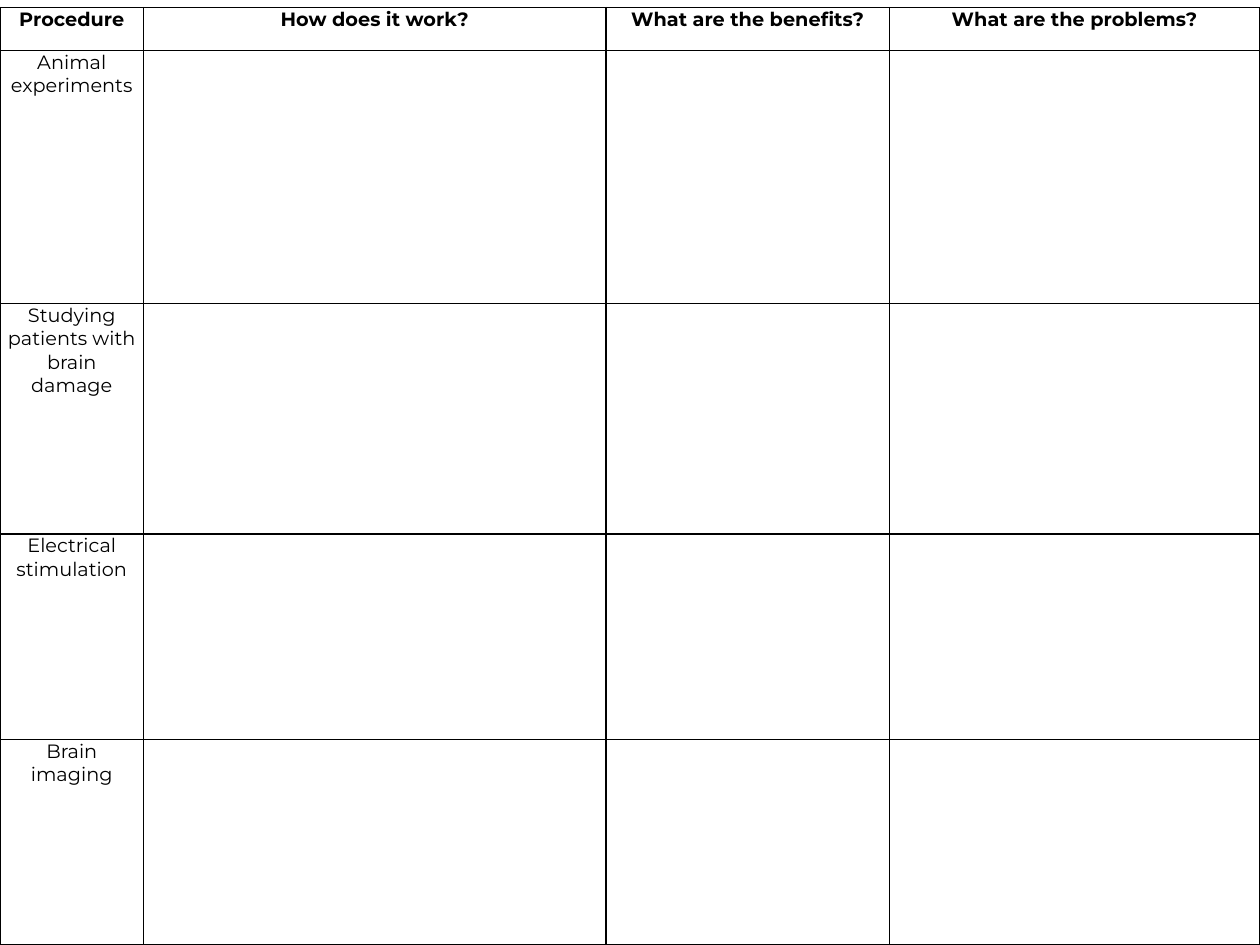
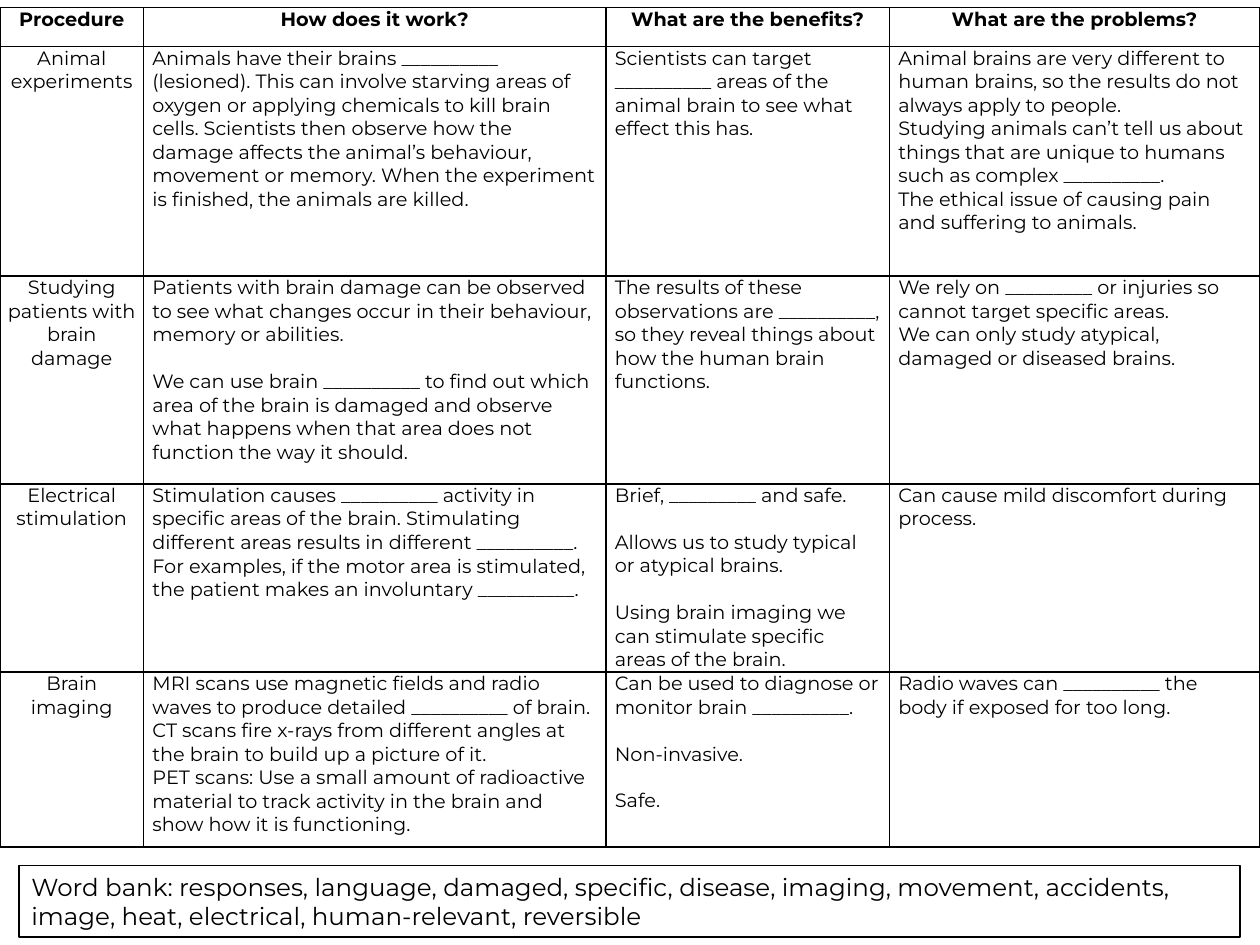
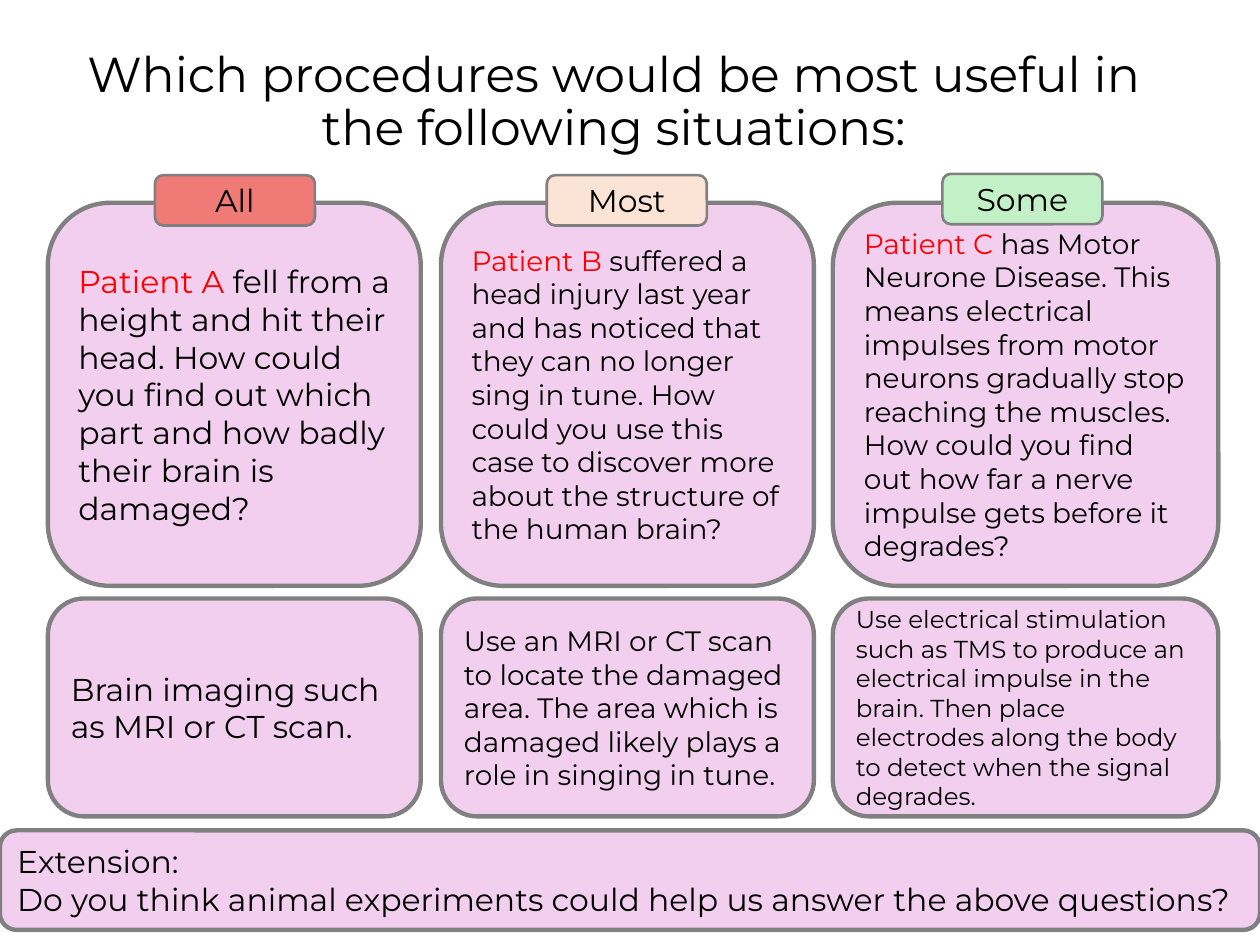
from dataclasses import dataclass
from typing import NamedTuple

from lxml.etree import SubElement
from pptx import Presentation
from pptx.dml.color import RGBColor
from pptx.enum.shapes import MSO_SHAPE
from pptx.enum.text import MSO_ANCHOR, MSO_AUTO_SIZE, PP_ALIGN
from pptx.oxml.ns import qn
from pptx.shapes.autoshape import Shape
from pptx.slide import Slide
from pptx.table import _Cell
from pptx.text.text import TextFrame
from pptx.util import Inches, Pt

SLIDE_WIDTH, SLIDE_HEIGHT = Inches(10), Inches(7.5)
GRID_COLUMNS, GRID_ROWS = 100, 75
FONT = "Montserrat"
BLACK, WHITE, GREY, RED, PINK = "000000", "FFFFFF", "808080", "FF0000", "F2CFEE"
TABLE_SIZE, TABLE_LINE = 11, 13.4
TABLE_TOP = 0.6
TABLE_COLUMNS = (11.4, 36.7, 22.5, 29.4)
HEADINGS = ("Procedure", "How does it work?", "What are the benefits?", "What are the problems?")
PROCEDURES = (
    "Animal experiments",
    "Studying patients with brain damage",
    "Electrical stimulation",
    "Brain imaging",
)
BLANK_ROWS = (3.4, 20.1, 18.3, 16.3, 16.3)
NOTES_ROWS = (3.1, 18.2, 16.5, 14.9, 13.9)
PANEL_LINE, LABEL_LINE = 2.5, 1.5


class Box(NamedTuple):
    """A place on the slide grid."""

    column: float
    row: float
    width: float
    height: float


class Span(NamedTuple):
    """A run of text in one colour."""

    text: str
    color: str = BLACK


class Notes(NamedTuple):
    """The paragraphs of a table cell and the space between them in points."""

    paragraphs: tuple[str, ...]
    gap: float = 0


@dataclass(frozen=True)
class Style:
    """The look of a text."""

    size: float
    bold: bool = False
    align: PP_ALIGN = PP_ALIGN.LEFT
    line_spacing: float | None = None
    gap: float = 0


@dataclass(frozen=True)
class Situation:
    """A patient's case with its level label and its answer."""

    level: str
    level_color: str
    level_column: float
    level_row: float
    column: float
    width: float
    patient: str
    question: str
    question_size: float
    answer: str
    answer_size: float


NOTES = (
    (
        Notes((
            "Animals have their brains __________ (lesioned). This can involve starving areas of "
            "oxygen or applying chemicals to kill brain cells. Scientists then observe how the "
            "damage affects the animal’s behaviour, movement or memory. When the experiment is "
            "finished, the animals are killed.",
        )),
        Notes((
            "Scientists can target __________ areas of the animal brain to see what effect this has.",
        )),
        Notes((
            "Animal brains are very different to human brains, so the results do not always apply "
            "to people.",
            "Studying animals can’t tell us about things that are unique to humans such as complex "
            "__________.",
            "The ethical issue of causing pain and suffering to animals.",
        )),
    ),
    (
        Notes((
            "Patients with brain damage can be observed to see what changes occur in their "
            "behaviour, memory or abilities.",
            "We can use brain __________ to find out which area of the brain is damaged and observe "
            "what happens when that area does not function the way it should.",
        ), TABLE_LINE),
        Notes((
            "The results of these observations are __________, so they reveal things about how the "
            "human brain functions.",
        )),
        Notes((
            "We rely on _________ or injuries so cannot target specific areas.",
            "We can only study atypical, damaged or diseased brains.",
        )),
    ),
    (
        Notes((
            "Stimulation causes __________ activity in specific areas of the brain. Stimulating "
            "different areas results in different __________. For examples, if the motor area is "
            "stimulated, the patient makes an involuntary __________.",
        )),
        Notes((
            "Brief, _________ and safe.",
            "Allows us to study typical or atypical brains.",
            "Using brain imaging we can stimulate specific areas of the brain.",
        ), TABLE_LINE),
        Notes(("Can cause mild discomfort during process.",)),
    ),
    (
        Notes((
            "MRI scans use magnetic fields and radio waves to produce detailed __________ of brain.",
            "CT scans fire x-rays from different angles at the brain to build up a picture of it.",
            "PET scans: Use a small amount of radioactive material to track activity in the brain "
            "and show how it is functioning.",
        )),
        Notes((
            "Can be used to diagnose or monitor brain __________.",
            "Non-invasive.",
            "Safe.",
        ), TABLE_LINE),
        Notes(("Radio waves can __________ the body if exposed for too long.",)),
    ),
)
WORD_BANK = (
    "Word bank: responses, language, damaged, specific, disease, imaging, movement, accidents, "
    "image, heat, electrical, human-relevant, reversible"
)
QUESTION = "Which procedures would be most useful in the following situations:"
EXTENSION = (
    "Extension:",
    "Do you think animal experiments could help us answer the above questions?",
)
SITUATIONS = (
    Situation(
        "All", "F07A75", 12.3, 13.9, 3.8, 29.6, "Patient A ",
        "fell from a height and hit their head. How could you find out which part and how badly "
        "their brain is damaged?", 18,
        "Brain imaging such as MRI or CT scan.", 18,
    ),
    Situation(
        "Most", "FBE3D6", 43.4, 13.9, 35, 29.6, "Patient B ",
        "suffered a head injury last year and has noticed that they can no longer sing in tune. "
        "How could you use this case to discover more about the structure of the human brain?", 16,
        "Use an MRI or CT scan to locate the damaged area. The area which is damaged likely plays "
        "a role in singing in tune.", 16,
    ),
    Situation(
        "Some", "C2F1C8", 74.8, 13.8, 66.1, 30.6, "Patient C ",
        "has Motor Neurone Disease. This means electrical impulses from motor neurons gradually "
        "stop reaching the muscles. How could you find out how far a nerve impulse gets before it "
        "degrades?", 16,
        "Use electrical stimulation such as TMS to produce an electrical impulse in the brain. "
        "Then place electrodes along the body to detect when the signal degrades.", 14,
    ),
)


def rgb(color: str) -> RGBColor:
    """Turn a hex string into a colour."""
    return RGBColor.from_string(color)


def across(columns: float) -> int:
    """Turn grid columns into a length."""
    return round(SLIDE_WIDTH * columns / GRID_COLUMNS)


def down(rows: float) -> int:
    """Turn grid rows into a length."""
    return round(SLIDE_HEIGHT * rows / GRID_ROWS)


def place(box: Box) -> tuple[int, int, int, int]:
    """Turn a grid box into left, top, width and height."""
    return across(box.column), down(box.row), across(box.width), down(box.height)


def plain(*texts: str) -> tuple[tuple[Span, ...], ...]:
    """Make one black paragraph of each text."""
    return tuple((Span(text),) for text in texts)


def write(frame: TextFrame, paragraphs: tuple[tuple[Span, ...], ...], style: Style) -> None:
    """Write paragraphs into a text frame run by run."""
    frame.word_wrap = True
    for index, spans in enumerate(paragraphs):
        paragraph = frame.add_paragraph() if index else frame.paragraphs[0]
        paragraph.alignment = style.align
        if style.line_spacing:
            paragraph.line_spacing = style.line_spacing
        if index and style.gap:
            paragraph.space_before = Pt(style.gap)
        for span in spans:
            run = paragraph.add_run()
            run.text = span.text
            run.font.name = FONT
            run.font.size = Pt(style.size)
            run.font.bold = style.bold
            run.font.color.rgb = rgb(span.color)


def finish_cell(cell: _Cell, inset: float) -> None:
    """Give a cell its borders, margins and fill."""
    properties = cell._tc.get_or_add_tcPr()
    for side in ("a:lnL", "a:lnR", "a:lnT", "a:lnB"):
        border = SubElement(properties, qn(side), w=str(Pt(1)))
        SubElement(SubElement(border, qn("a:solidFill")), qn("a:srgbClr"), val=BLACK)
    cell.fill.solid()
    cell.fill.fore_color.rgb = rgb(WHITE)
    cell.margin_left = cell.margin_right = Inches(inset)
    cell.margin_top = cell.margin_bottom = 0


def add_procedure_table(
    slide: Slide, heights: tuple[float, ...], notes: tuple[tuple[Notes, ...], ...] = ()
) -> None:
    """Draw the table of procedures, with notes if there are any."""
    box = Box(0, TABLE_TOP, sum(TABLE_COLUMNS), sum(heights))
    table = slide.shapes.add_table(len(heights), len(TABLE_COLUMNS), *place(box)).table
    table.first_row = table.horz_banding = False
    for column, width in zip(table.columns, TABLE_COLUMNS):
        column.width = across(width)
    for row, height in zip(table.rows, heights):
        row.height = down(height)
    heading_style = Style(TABLE_SIZE, bold=True, align=PP_ALIGN.CENTER)
    procedure_style = Style(TABLE_SIZE, align=PP_ALIGN.CENTER)
    for index, heading in enumerate(HEADINGS):
        write(table.cell(0, index).text_frame, plain(heading), heading_style)
    for index, procedure in enumerate(PROCEDURES, 1):
        write(table.cell(index, 0).text_frame, plain(procedure), procedure_style)
    for row_index, row_notes in enumerate(notes, 1):
        for index, note in enumerate(row_notes, 1):
            frame = table.cell(row_index, index).text_frame
            write(frame, plain(*note.paragraphs), Style(TABLE_SIZE, gap=note.gap))
    for row_index, row in enumerate(table.rows):
        for index, cell in enumerate(row.cells):
            finish_cell(cell, 0.07 if row_index and index else 0.06)


def add_panel(
    slide: Slide,
    box: Box,
    paragraphs: tuple[tuple[Span, ...], ...],
    style: Style,
    fill: str | None = PINK,
    line: str = GREY,
    line_width: float = PANEL_LINE,
    outline: MSO_SHAPE = MSO_SHAPE.ROUNDED_RECTANGLE,
) -> Shape:
    """Draw an outlined panel with text in its middle."""
    panel = slide.shapes.add_shape(outline, *place(box))
    panel.shadow.inherit = False
    if fill:
        panel.fill.solid()
        panel.fill.fore_color.rgb = rgb(fill)
    else:
        panel.fill.background()
    panel.line.color.rgb = rgb(line)
    panel.line.width = Pt(line_width)
    panel.text_frame.vertical_anchor = MSO_ANCHOR.MIDDLE
    write(panel.text_frame, paragraphs, style)
    return panel


def add_word_bank(slide: Slide) -> None:
    """Draw the box of words that fill the gaps."""
    bank = add_panel(
        slide, Box(1.5, 68.7, 96.9, 5.7), plain(WORD_BANK), Style(14),
        fill=None, line=BLACK, line_width=1, outline=MSO_SHAPE.RECTANGLE,
    )
    bank.text_frame.vertical_anchor = MSO_ANCHOR.TOP
    bank.text_frame.auto_size = MSO_AUTO_SIZE.SHAPE_TO_FIT_TEXT


def add_situations(slide: Slide) -> None:
    """Draw the question, the cases, their answers and the extension."""
    title = slide.shapes.add_textbox(*place(Box(4, 2.2, 89.4, 12))).text_frame
    title.vertical_anchor = MSO_ANCHOR.MIDDLE
    write(title, plain(QUESTION), Style(28, align=PP_ALIGN.CENTER, line_spacing=0.9))
    for case in SITUATIONS:
        spans = (Span(case.patient, RED), Span(case.question))
        question_box = Box(case.column, 16.1, case.width, 30.4)
        answer_box = Box(case.column, 47.5, case.width, 17.3)
        add_panel(slide, question_box, (spans,), Style(case.question_size))
        add_panel(slide, answer_box, plain(case.answer), Style(case.answer_size))
        add_panel(
            slide, Box(case.level_column, case.level_row, 12.7, 4), plain(case.level),
            Style(18, align=PP_ALIGN.CENTER), fill=case.level_color, line_width=LABEL_LINE,
        )
    add_panel(slide, Box(0, 65.9, 100, 7.9), plain(*EXTENSION), Style(18))


def main() -> None:
    """Build the three slides and save them."""
    deck = Presentation()
    deck.slide_width, deck.slide_height = SLIDE_WIDTH, SLIDE_HEIGHT
    blank_layout = deck.slide_layouts[6]
    worksheet, gap_fill, situations = (deck.slides.add_slide(blank_layout) for _ in range(3))
    add_procedure_table(worksheet, BLANK_ROWS)
    add_procedure_table(gap_fill, NOTES_ROWS, NOTES)
    add_word_bank(gap_fill)
    add_situations(situations)
    deck.save("out.pptx")


if __name__ == "__main__":
    main()
